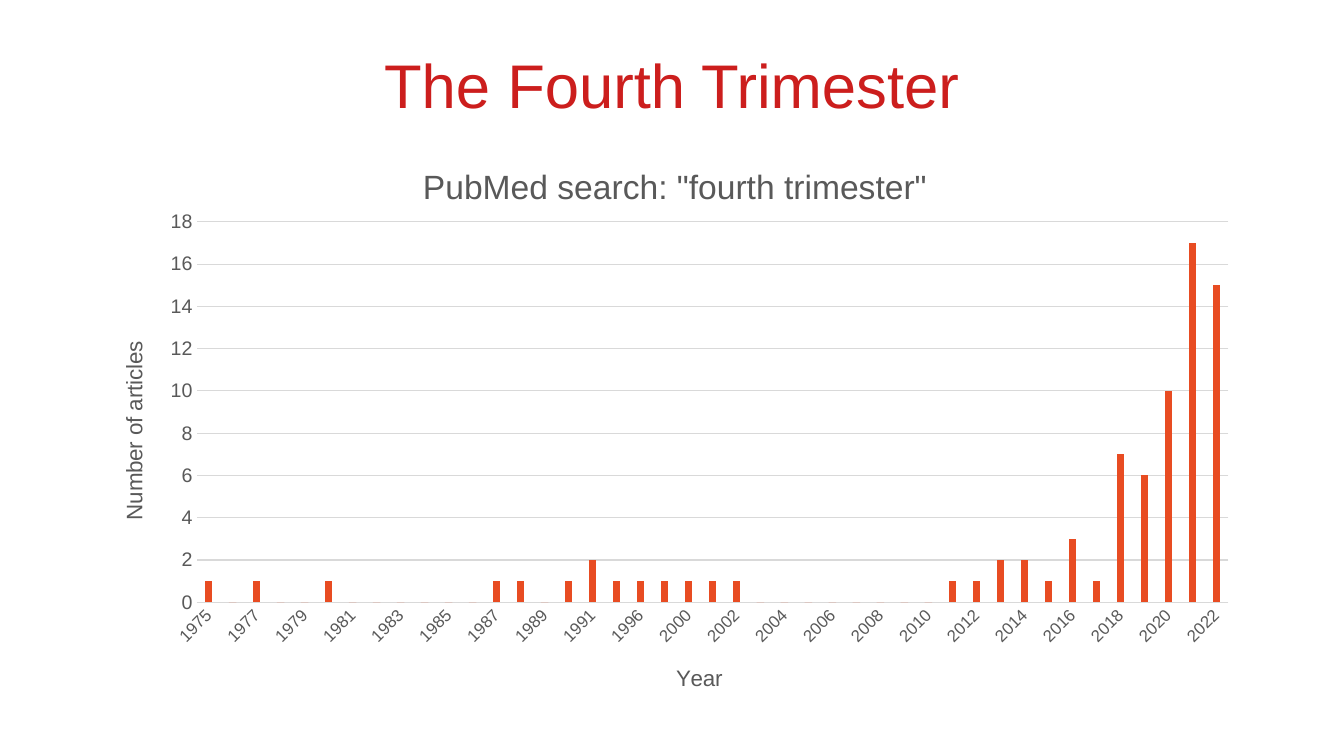
from dataclasses import dataclass

from lxml.etree import SubElement
from pptx import Presentation
from pptx.chart.chart import Chart
from pptx.chart.data import CategoryChartData
from pptx.dml.color import RGBColor
from pptx.enum.chart import XL_CHART_TYPE, XL_TICK_MARK
from pptx.enum.text import MSO_ANCHOR, PP_ALIGN
from pptx.oxml.ns import qn
from pptx.util import Emu, Pt

PX = 9525  # EMU per px, 96 px to the inch
FONT = "Arial"
COLORS = {"title": "CC1E1D", "bar": "E84C22", "text": "595959",
          "grid": "D9D9D9", "black": "000000", "white": "FFFFFF"}

YEARS = [*range(1975, 1993), 1996, 1998, *range(2000, 2023)]
ARTICLES = {
    1975: 1, 1977: 1, 1980: 1, 1987: 1, 1988: 1, 1990: 1, 1991: 2, 1992: 1,
    1996: 1, 1998: 1, 2000: 1, 2001: 1, 2002: 1, 2011: 1, 2012: 1, 2013: 2,
    2014: 2, 2015: 1, 2016: 3, 2017: 1, 2018: 7, 2019: 6, 2020: 10,
    2021: 17, 2022: 15,
}


@dataclass
class Caption:
    """A chart or axis title, placed by fractions of the chart area."""
    owner: object
    text: str
    size: int
    x: float
    y: float


def px(n: int) -> Emu:
    return Emu(n * PX)


def rgb(name: str) -> RGBColor:
    return RGBColor.from_string(COLORS[name])


def style_font(font, size: int, color: str) -> None:
    font.name = FONT
    font.size = Pt(size)
    font.bold = False
    font.color.rgb = rgb(color)


def set_layout(parent, index: int, **values) -> None:
    """Give a chart part a manual layout."""
    for old in parent.findall(qn("c:layout")):
        parent.remove(old)
    layout = SubElement(parent, qn("c:layout"))
    parent.insert(index, layout)
    manual = SubElement(layout, qn("c:manualLayout"))
    for tag, value in values.items():
        SubElement(manual, qn(f"c:{tag}")).set("val", str(value))


def add_caption(c: Caption) -> None:
    title = c.owner.axis_title if hasattr(c.owner, "axis_title") else c.owner.chart_title
    r = title.text_frame.paragraphs[0].add_run()
    r.text = c.text
    style_font(r.font, c.size, "text")
    set_layout(title._element, 1, xMode="edge", yMode="edge", x=c.x, y=c.y)


def add_title(s) -> None:
    tf = s.shapes.add_textbox(px(88), px(42), px(1104), px(85)).text_frame
    tf.word_wrap = True
    tf.vertical_anchor = MSO_ANCHOR.MIDDLE
    p = tf.paragraphs[0]
    p.alignment = PP_ALIGN.CENTER
    p.line_spacing = 0.9
    r = p.add_run()
    r.text = "The Fourth Trimester"
    style_font(r.font, 44, "title")


def add_article_chart(s) -> Chart:
    data = CategoryChartData()
    data.categories = [str(year) for year in YEARS]
    data.add_series("Series 1", [ARTICLES.get(year, 0) for year in YEARS])
    chart = s.shapes.add_chart(XL_CHART_TYPE.COLUMN_CLUSTERED, px(88), px(129),
                               px(1104), px(549), data).chart
    chart.has_legend = False
    style_font(chart.font, 10, "black")
    plot = chart.plots[0]
    plot.vary_by_categories = False
    plot.gap_width = 219
    plot.overlap = -27
    fill = plot.series[0].format.fill
    fill.solid()
    fill.fore_color.rgb = rgb("bar")
    return chart


def style_axes(chart: Chart) -> None:
    years, counts = chart.category_axis, chart.value_axis
    for axis, size in ((years, 12), (counts, 14)):
        axis.major_tick_mark = axis.minor_tick_mark = XL_TICK_MARK.NONE
        style_font(axis.tick_labels.font, size, "text")
    counts.minimum_scale, counts.maximum_scale, counts.major_unit = 0, 18, 2
    counts.has_major_gridlines = True
    counts.format.line.fill.background()
    for line in (years.format.line, counts.major_gridlines.format.line):
        line.color.rgb = rgb("grid")
        line.width = Pt(0.75)
    # Slanted year labels
    body = years._element.find(qn("c:txPr")).find(qn("a:bodyPr"))
    body.set("rot", str(-45 * 60000))
    body.set("vert", "horz")


def main() -> None:
    prs = Presentation()
    prs.slide_width, prs.slide_height = px(1280), px(720)
    s = prs.slides.add_slide(prs.slide_layouts[6])
    s.background.fill.solid()
    s.background.fill.fore_color.rgb = rgb("white")

    add_title(s)

    # Chart with its axes, captions and plot area
    chart = add_article_chart(s)
    style_axes(chart)
    for caption in (
        Caption(chart, 'PubMed search: "fourth trimester"', 24, 0.28, 0.04),
        Caption(chart.category_axis, "Year", 16, 0.5, 0.91),
        Caption(chart.value_axis, "Number of articles", 16, 0.02, 0.35),
    ):
        add_caption(caption)
    plot_area = chart._chartSpace.chart.plotArea
    set_layout(plot_area, 0, layoutTarget="inner", xMode="edge", yMode="edge",
               x=0.09, y=0.15, w=0.89, h=0.66)

    prs.save("out.pptx")


if __name__ == "__main__":
    main()
